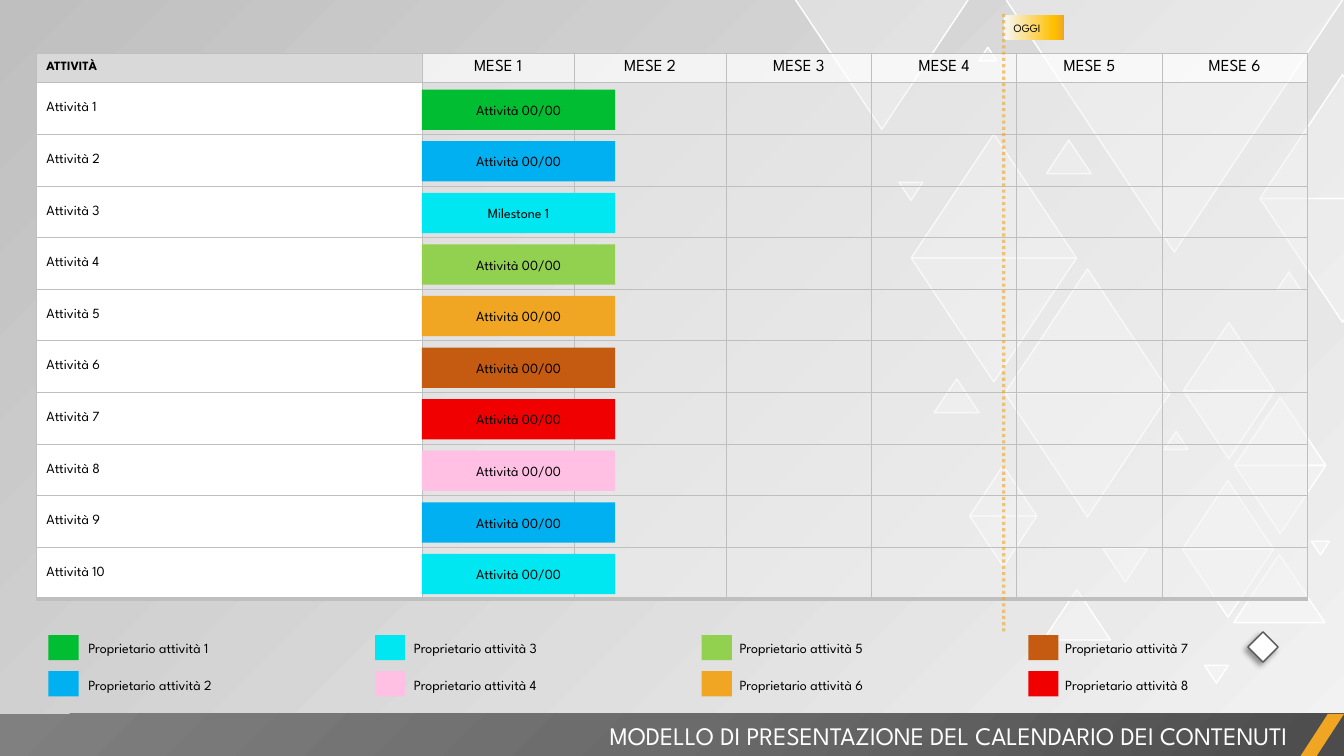
import lxml.etree
import pptx
import pptx.dml.color
import pptx.enum.dml
import pptx.enum.shapes
import pptx.enum.text
import pptx.oxml.ns
import pptx.util

TITLE = "MODELLO DI PRESENTAZIONE DEL CALENDARIO DEI CONTENUTI"
TODAY = "OGGI"
HEADER = ["ATTIVITÀ"] + [f"MESE {n}" for n in range(1, 7)]
BARS = [
    ("Attività 00/00", "green"),
    ("Attività 00/00", "blue"),
    ("Milestone 1", "cyan"),
    ("Attività 00/00", "lime"),
    ("Attività 00/00", "orange"),
    ("Attività 00/00", "brown"),
    ("Attività 00/00", "red"),
    ("Attività 00/00", "pink"),
    ("Attività 00/00", "blue"),
    ("Attività 00/00", "cyan"),
]
OWNERS = ["green", "blue", "cyan", "pink", "lime", "orange", "brown", "red"]
FONT = "League Spartan"
COLORS = {
    "green": "00BD32", "blue": "00B0F0", "cyan": "00E7F2", "lime": "92D050",
    "orange": "F0A622", "brown": "C55A11", "red": "F10002", "pink": "FFC0E3",
    "white": "FFFFFF", "black": "000000", "border": "BFBFBF", "head": "D9D9D9",
    "cell": "F2F2F2", "outline": "595959", "amber": "FFC000", "ice": "F6F8FC",
    "gray dark": "4C4C4C", "gray mid": "6B6B6B", "gray light": "808080",
}
TRIANGLES = {
    "pair": [(650.9, 95.8, 118), (717.8, 192.2, 118), (844.6, 343.4, 65),
             (845.3, 230.4, 65), (882, 283.7, 65), (692.6, 332.6, 48), (900, 53.3, 118)],
    "up": [(881.3, 396, 65), (745.2, 421.2, 48), (667.4, 270.7, 32), (831.6, 308.2, 17),
           (912.2, 194.4, 17), (699.1, 33.8, 13), (747.4, 100.1, 32)],
    "down": [(717.8, -1.4, 242), (787.7, 391.7, 32), (860.4, 475.2, 17),
             (642.2, 130.3, 17), (936.7, 386.6, 13), (567.4, -1.4, 125)],
}
TABLE_X, TABLE_Y = 26, 38
COL_WIDTHS = [275.4] + [108.7] * 2 + [103.8] * 4
HEAD_H, ROW_H = 21, 36.9
TODAY_X = 717

Pt = pptx.util.Pt
qn = pptx.oxml.ns.qn
SHAPE = pptx.enum.shapes.MSO_SHAPE
ALIGN = pptx.enum.text.PP_ALIGN
MIDDLE = pptx.enum.text.MSO_ANCHOR.MIDDLE


def rgb(name):
    return pptx.dml.color.RGBColor.from_string(COLORS[name])


def add(parent, tag, **attrs):
    return lxml.etree.SubElement(parent, qn(tag), **{k: str(v) for k, v in attrs.items()})


def set_alpha(props, percent):
    add(props.find(".//" + qn("a:srgbClr")), "a:alpha", val=percent * 1000)


def set_gradient(props, stops, angle=None):
    solid = props.find(qn("a:solidFill"))
    grad = lxml.etree.Element(qn("a:gradFill"), rotWithShape="1")
    stop_list = add(grad, "a:gsLst")
    for pos, color, alpha in stops:
        stop = add(stop_list, "a:gs", pos=pos * 1000)
        add(stop, "a:srgbClr", val=COLORS[color])
        if alpha < 100:
            set_alpha(stop, alpha)
    if angle is None:
        add(add(grad, "a:path", path="circle"), "a:fillToRect", l=100000, t=100000)
    else:
        add(grad, "a:lin", ang=angle * 60000, scaled=0)
    props.replace(solid, grad)


def write(tf, text, size, color="black", align=ALIGN.LEFT, bold=False):
    p = tf.paragraphs[0]
    p.text = text
    p.alignment = align
    p.font.name, p.font.size, p.font.bold = FONT, Pt(size), bold
    p.font.color.rgb = rgb(color)


def add_shape(kind, x, y, w, h, color, line=None):
    sp = s.shapes.add_shape(kind, Pt(x), Pt(y), Pt(w), Pt(h))
    sp.shadow.inherit = False
    sp.fill.solid()
    sp.fill.fore_color.rgb = rgb(color)
    if line:
        sp.line.color.rgb = rgb(line)
        sp.line.width = Pt(1)
    else:
        sp.line.fill.background()
    sp.text_frame.vertical_anchor = MIDDLE
    return sp


def add_triangle(x, y, w, rotation):
    sp = add_shape(SHAPE.ISOSCELES_TRIANGLE, x, y, w, w * 0.75, "white", "white")
    set_alpha(sp.element.spPr.find(qn("a:solidFill")), 30)
    sp.rotation = rotation


def style_cell(cell, color, alpha, bottom):
    cell.vertical_anchor = MIDDLE
    cell.fill.solid()
    cell.fill.fore_color.rgb = rgb(color)
    props = cell._tc.get_or_add_tcPr()
    if alpha < 100:
        set_alpha(props, alpha)
    for i, (side, width) in enumerate(zip("LRTB", (0.5, 0.5, 0.5, bottom))):
        ln = lxml.etree.Element(qn("a:ln" + side), w=str(Pt(width)))
        add(add(ln, "a:solidFill"), "a:srgbClr", val=COLORS["border"])
        props.insert(i, ln)


prs = pptx.Presentation()
prs.slide_width, prs.slide_height = Pt(960), Pt(540)
s = prs.slides.add_slide(prs.slide_layouts[5])
s.background.fill.solid()
set_gradient(s.element.find(".//" + qn("p:bgPr")), [(0, "cell", 40), (100, "border", 100)], 225)

for kind, places in TRIANGLES.items():
    for x, y, w in places:
        if kind != "down":
            add_triangle(x, y, w, 0)
        if kind != "up":
            add_triangle(x, y + (w * 0.75 if kind == "pair" else 0), w, 180)

footer = add_shape(SHAPE.RECTANGLE, 0, 510, 960, 30, "gray dark")
set_gradient(footer.element.spPr,
             [(0, "gray dark", 100), (50, "gray mid", 100), (100, "gray light", 100)])
accent = add_shape(SHAPE.PARALLELOGRAM, 929, 510, 31, 30, "orange")
accent.adjustments[0] = 0.65

title = s.shapes.title
title.left, title.top, title.width, title.height = Pt(206), Pt(511), Pt(721), Pt(29)
title.text_frame.auto_size = pptx.enum.text.MSO_AUTO_SIZE.NONE
title.text_frame.vertical_anchor = MIDDLE
write(title.text_frame, TITLE, 18, "white", ALIGN.RIGHT)
title.element.getparent().append(title.element)

rows = len(BARS) + 1
table = s.shapes.add_table(rows, len(HEADER), Pt(TABLE_X), Pt(TABLE_Y), Pt(sum(COL_WIDTHS)),
                           Pt(HEAD_H + ROW_H * len(BARS))).table
for column, width in zip(table.columns, COL_WIDTHS):
    column.width = Pt(width)
for r, row in enumerate(table.rows):
    row.height = Pt(ROW_H if r else HEAD_H)
    for c, cell in enumerate(row.cells):
        if c == 0:
            color, alpha = ("white" if r else "head"), 100
        else:
            color, alpha = ("cell", 50) if r else ("white", 75)
        style_cell(cell, color, alpha, 3 if r == rows - 1 else 0.5)
        if r == 0:
            write(cell.text_frame, HEADER[c], 12 if c else 9,
                  align=ALIGN.CENTER if c else ALIGN.LEFT, bold=c == 0)
        elif c == 0:
            write(cell.text_frame, f"Attività {r}", 10)

for i, (label, color) in enumerate(BARS):
    sp = add_shape(SHAPE.RECTANGLE, TABLE_X + COL_WIDTHS[0], 64 + i * 36.85, 138, 28.8, color)
    write(sp.text_frame, label, 10, align=ALIGN.CENTER)

for i, color in enumerate(OWNERS):
    col, row = divmod(i, 2)
    y = 453.6 + row * 25.8
    add_shape(SHAPE.RECTANGLE, 34.6 + col * 233.3, y, 21.6, 18, color)
    box = s.shapes.add_textbox(Pt(56 + col * 232.6), Pt(y), Pt(173), Pt(19))
    box.text_frame.word_wrap = True
    write(box.text_frame, f"Proprietario attività {i + 1}", 10)

flag = add_shape(SHAPE.RECTANGLE, TODAY_X, 10.8, 43, 18, "amber")
set_gradient(flag.element.spPr, [(0, "ice", 100), (83, "amber", 100), (100, "orange", 100)], 0)
write(flag.text_frame, TODAY, 8)
line = s.shapes.add_connector(pptx.enum.shapes.MSO_CONNECTOR.STRAIGHT,
                              Pt(TODAY_X), Pt(10), Pt(TODAY_X), Pt(451))
line.line.color.rgb = rgb("orange")
line.line.width = Pt(2.25)
line.line.dash_style = pptx.enum.dml.MSO_LINE.ROUND_DOT
set_alpha(line.element.spPr, 60)
add(line.element.spPr, "a:effectLst")

milestone = add_shape(SHAPE.DIAMOND, 891.4, 451.4, 21.6, 21.6, "white", "outline")
shadow = add(milestone.element.spPr.find(qn("a:effectLst")), "a:outerShdw", blurRad=Pt(4),
             dist=Pt(3), dir=135 * 60000, algn="tr", rotWithShape=0)
add(shadow, "a:srgbClr", val=COLORS["black"])
set_alpha(shadow, 40)

prs.save("out.pptx")
